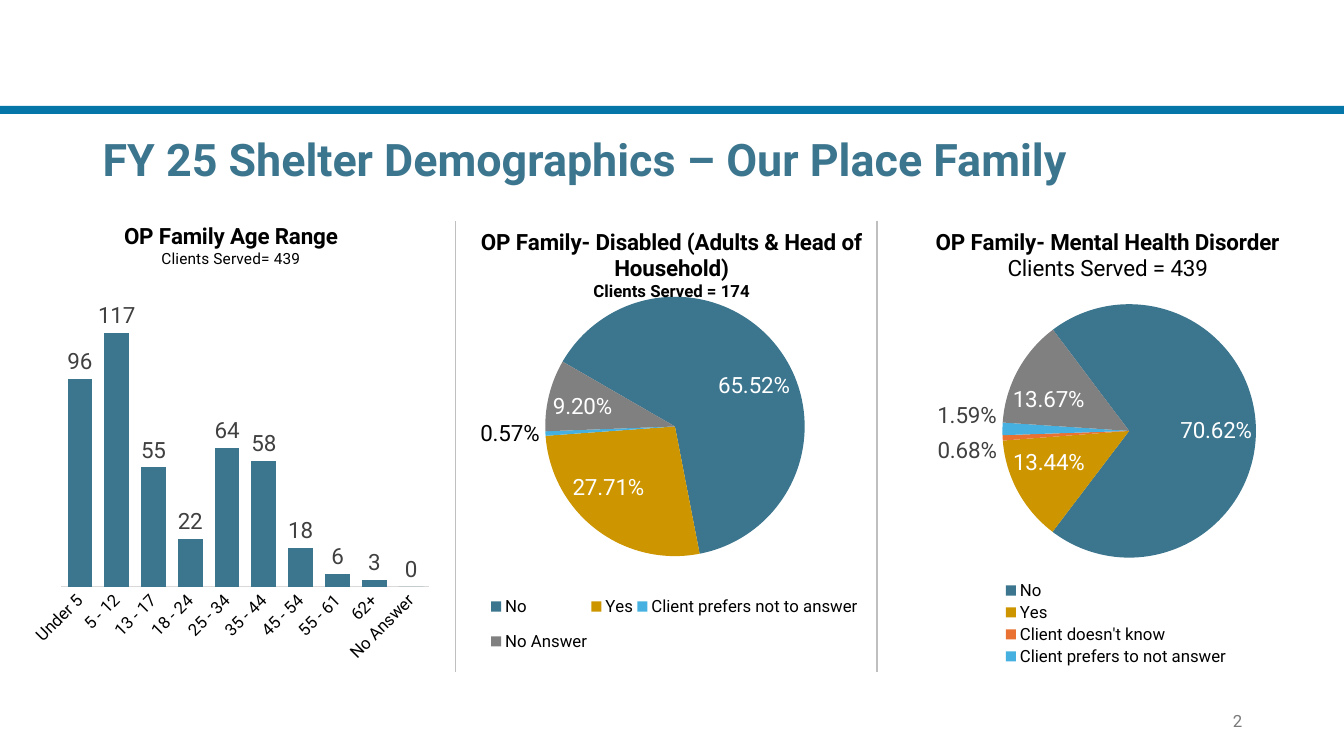
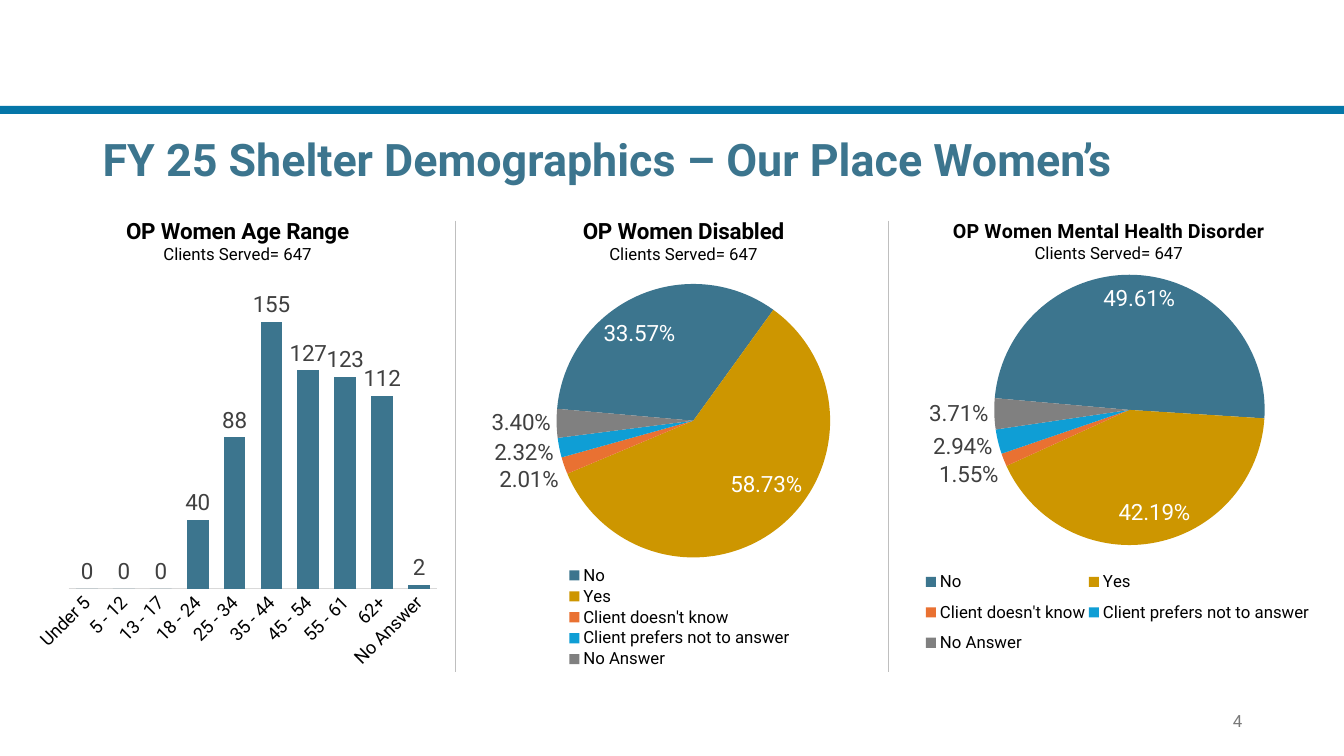
from dataclasses import dataclass

from lxml import etree
from pptx import Presentation
from pptx import util as u
from pptx.chart.data import CategoryChartData
from pptx.dml.color import RGBColor
from pptx.enum import chart as ch, shapes, text
from pptx.oxml.ns import qn


@dataclass(frozen=True)
class Theme:
    font: str = "Roboto"
    band: str = "0476A8"
    teal: str = "3C758E"
    gold: str = "CD9600"
    orange: str = "E97132"
    sky: str = "46B1E1"
    blue: str = "0F9ED5"
    gray: str = "808080"
    ink: str = "000000"
    label: str = "404040"
    white: str = "FFFFFF"
    rule: str = "BFBFBF"
    axis: str = "D9D9D9"
    number: str = "797979"
    title_size: int = 32
    label_size: int = 16
    small_size: int = 12


T = Theme()
AGES = ["Under 5", "5 - 12", "13 - 17", "18 - 24", "25 - 34",
        "35 - 44", "45 - 54", "55 - 61", "62+", "No Answer"]
ANSWERS = ["No", "Yes", "Client doesn't know",
           "Client prefers not to answer", "No Answer"]
WOMEN_COLORS = [T.teal, T.gold, T.orange, T.blue, T.gray]


def style_font(font, size, color, bold=False):
    font.name = T.font
    font.size = u.Pt(size)
    font.bold = bold
    font.color.rgb = RGBColor.from_string(color)


def add_run(p, words, size, color, bold=False):
    r = p.add_run()
    r.text = words
    style_font(r.font, size, color, bold)


def add_text(slide, box, words, size, color, bold=False,
             align=text.PP_ALIGN.LEFT, spacing=1.0):
    sp = slide.shapes.add_textbox(*map(u.Inches, box))
    tf = sp.text_frame
    tf.word_wrap = True
    tf.vertical_anchor = text.MSO_ANCHOR.MIDDLE
    p = tf.paragraphs[0]
    p.alignment = align
    p.line_spacing = spacing
    add_run(p, words, size, color, bold)


def add_band(slide):
    sp = slide.shapes.add_shape(
        shapes.MSO_SHAPE.RECTANGLE, 0, u.Inches(1.05), u.Inches(13.33), u.Inches(0.08))
    sp.shadow.inherit = False
    sp.fill.solid()
    sp.fill.fore_color.rgb = RGBColor.from_string(T.band)
    sp.line.fill.background()


def add_divider(slide, x):
    line = slide.shapes.add_connector(
        shapes.MSO_CONNECTOR.STRAIGHT,
        u.Inches(x), u.Inches(2.19), u.Inches(x), u.Inches(6.67))
    line.line.color.rgb = RGBColor.from_string(T.rule)
    line.line.width = u.Pt(1)
    etree.SubElement(line._element.spPr, qn("a:effectLst"))


def set_layout(parent, index, values, inner=False, edge=True):
    for old in parent.findall(qn("c:layout")):
        parent.remove(old)
    layout = etree.Element(qn("c:layout"))
    manual = etree.SubElement(layout, qn("c:manualLayout"))
    if inner:
        etree.SubElement(manual, qn("c:layoutTarget")).set("val", "inner")
    if edge:
        for mode in ("xMode", "yMode"):
            etree.SubElement(manual, qn("c:" + mode)).set("val", "edge")
    for name, value in zip("xywh", values):
        etree.SubElement(manual, qn("c:" + name)).set("val", f"{value:.4f}")
    parent.insert(index, layout)


def fractions(frame, box):
    left, top, width, height = frame
    x, y, *size = box
    return [(x - left) / width, (y - top) / height,
            *(s / full for s, full in zip(size, (width, height)))]


def add_chart(slide, kind, frame, cats, vals, fmt, heading, heading_at, plot):
    data = CategoryChartData(number_format=fmt)
    data.categories = cats
    data.add_series("Series 1", vals)
    chart = slide.shapes.add_chart(kind, *map(u.Inches, frame), data).chart
    style_font(chart.font, 10, T.ink)
    chart.has_legend = False
    chart.has_title = True
    tf = chart.chart_title.text_frame
    for i, (words, size, bold) in enumerate(heading):
        p = tf.add_paragraph() if i else tf.paragraphs[0]
        add_run(p, words, size, T.ink, bold)
    chart.chart_title.include_in_layout = False
    set_layout(chart.chart_title._element, 1, fractions(frame, heading_at))
    set_layout(chart._chartSpace.chart.plotArea, 0, plot, inner=True)
    labels = chart.series[0].data_labels
    labels.show_value = True
    labels.number_format = fmt
    labels.number_format_is_linked = False
    labels.position = ch.XL_LABEL_POSITION.OUTSIDE_END
    style_font(labels.font, T.label_size, T.label)
    return chart


def add_age_chart(slide, frame, vals, heading, heading_at, plot_box, top, gap, size):
    chart = add_chart(slide, ch.XL_CHART_TYPE.COLUMN_CLUSTERED, frame, AGES, vals,
                      "#,##0", heading, heading_at, fractions(frame, plot_box))
    bars = chart.plots[0]
    bars.gap_width = gap
    bars.overlap = -27
    bars.vary_by_categories = False
    fill = chart.series[0].format.fill
    fill.solid()
    fill.fore_color.rgb = RGBColor.from_string(T.teal)
    values = chart.value_axis
    values.minimum_scale = 0
    values.maximum_scale = top
    values.has_major_gridlines = False
    values.visible = False
    ages = chart.category_axis
    ages.major_tick_mark = ch.XL_TICK_MARK.NONE
    ages.format.line.color.rgb = RGBColor.from_string(T.axis)
    ages.format.line.width = u.Pt(0.75)
    style_font(ages.tick_labels.font, size, T.ink)
    ages._element.find(qn("c:txPr")).find(qn("a:bodyPr")).set("rot", "-2700000")


def set_flag(parent, name, value):
    for old in parent.findall(qn(name)):
        parent.remove(old)
    etree.SubElement(parent, qn(name)).set("val", str(value))


def place_pie_labels(series, frame, inside, nudges, outside_color):
    style_font(series.data_labels.font, T.label_size, outside_color)
    set_flag(series.data_labels._element, "c:showLeaderLines", 0)
    for i in sorted({*inside, *nudges}):
        label = series.points[i].data_label
        within = i in inside
        style_font(label.font, T.label_size, T.white if within else outside_color)
        label.position = (ch.XL_LABEL_POSITION.INSIDE_END if within
                          else ch.XL_LABEL_POSITION.OUTSIDE_END)
        if i in nudges:
            dx, dy = nudges[i]
            set_layout(label._get_or_add_dLbl(), 1,
                       (dx / frame[2], dy / frame[3]), edge=False)


def add_answer_pie(slide, frame, cats, vals, colors, heading, heading_at, plot, start,
                   inside, nudges, legend_box, outside_color=T.label, hidden=None):
    chart = add_chart(slide, ch.XL_CHART_TYPE.PIE, frame, cats, vals,
                      "0.00%", heading, heading_at, plot)
    series = chart.series[0]
    for i, color in enumerate(colors):
        fill = series.points[i].format.fill
        fill.solid()
        fill.fore_color.rgb = RGBColor.from_string(color)
    place_pie_labels(series, frame, inside, nudges, outside_color)
    set_flag(chart.plots[0]._element, "c:firstSliceAng", start)
    chart.has_legend = True
    legend = chart.legend
    legend.position = ch.XL_LEGEND_POSITION.BOTTOM
    legend.include_in_layout = False
    style_font(legend.font, T.small_size, T.ink)
    set_layout(legend._element, 1, fractions(frame, legend_box))
    if hidden is not None:
        entry = etree.Element(qn("c:legendEntry"))
        etree.SubElement(entry, qn("c:idx")).set("val", str(hidden))
        etree.SubElement(entry, qn("c:delete")).set("val", "1")
        legend._element.insert(1, entry)


def add_page(prs, title, number, dividers):
    slide = prs.slides.add_slide(prs.slide_layouts[6])
    add_band(slide)
    add_text(slide, (0.92, 1.23, 11.5, 0.75), title, T.title_size, T.teal, True,
             spacing=0.9)
    for x in dividers:
        add_divider(slide, x)
    add_text(slide, (9.42, 6.95, 3, 0.4), number, T.small_size, T.number,
             align=text.PP_ALIGN.RIGHT)
    return slide


def add_family_page(prs):
    slide = add_page(prs, "FY 25 Shelter Demographics – Our Place Family", "2", (4.52, 8.7))
    add_age_chart(
        slide, (0.24, 2.04, 4.11, 4.63), [96, 117, 55, 22, 64, 58, 18, 6, 3, 0],
        [("OP Family Age Range", 16, True), ("Clients Served= 439", 11, False)],
        (1.2, 2.18), (0.61, 2.81, 3.65, 3.01), 140, 49, 12)
    add_answer_pie(
        slide, (4.19, 2.09, 4.95, 4.64),
        ["No", "Yes", "Client prefers not to answer", "No Answer"],
        [0.6552, 0.2771, 0.0057, 0.092], [T.teal, T.gold, T.sky, T.gray],
        [("OP Family- Disabled (Adults & Head of Household)", 16, True),
         ("Clients Served = 174", 12, True)],
        (4.74, 2.24), (0.246, 0.184, 0.52, 0.555), 300, (0, 1, 3),
        {0: (0.14, 0.19), 1: (-0.27, -0.24), 3: (-0.02, -0.02)},
        (4.83, 5.77, 3.72, 0.84), outside_color=T.ink)
    add_answer_pie(
        slide, (8.7, 2.09, 4.55, 4.64),
        ["No", "Yes", "Client doesn't know", "Client prefers to not answer", "No Answer"],
        [0.7062, 0.1344, 0.0068, 0.0159, 0.1367],
        [T.teal, T.gold, T.orange, T.sky, T.gray],
        [("OP Family- Mental Health Disorder", 16, True),
         ("Clients Served = 439", 16, False)],
        (9.25, 2.24), (0.256, 0.2, 0.587, 0.542), 323, (0, 1, 4),
        {0: (0.02, 0), 1: (-0.1, -0.13), 2: (0, 0.13), 3: (0, -0.13), 4: (-0.1, 0.14)},
        (9.87, 5.74, 2.4, 0.89), hidden=4)


def add_women_page(prs):
    slide = add_page(prs, "FY 25 Shelter Demographics – Our Place Women’s", "4", (4.52, 8.81))
    served = ("Clients Served= 647", 12, False)
    add_age_chart(
        slide, (0.28, 1.98, 4.15, 4.76), [0, 0, 0, 40, 88, 155, 127, 123, 112, 2],
        [("OP Women Age Range", 16, True), served],
        (1.22, 2.13), (0.68, 2.77, 3.66, 3.07), 180, 69, 13)
    add_answer_pie(
        slide, (4.46, 1.98, 4.68, 4.76), ANSWERS,
        [0.3357, 0.5873, 0.0201, 0.0232, 0.034], WOMEN_COLORS,
        [("OP Women Disabled", 16, True), served],
        (5.75, 2.13), (0.221, 0.176, 0.591, 0.57), 275, (0, 1),
        {0: (-0.35, 0.2), 1: (0.27, -0.25), 3: (0, -0.08)},
        (5.54, 5.6, 2.4, 1.05))
    add_answer_pie(
        slide, (8.75, 1.98, 4.5, 4.69), ANSWERS,
        [0.4961, 0.4219, 0.0155, 0.0294, 0.0371], WOMEN_COLORS,
        [("OP Women Mental Health Disorder", 14, True), served],
        (9.42, 2.13), (0.247, 0.159, 0.596, 0.572), 275, (0, 1),
        {0: (0, 0.05), 1: (0.37, -0.11), 3: (0, -0.09)},
        (9.15, 5.57, 3.87, 1.01))


def main():
    prs = Presentation()
    prs.slide_width = u.Inches(13.33)
    prs.slide_height = u.Inches(7.5)
    add_family_page(prs)
    add_women_page(prs)
    prs.save("out.pptx")


if __name__ == "__main__":
    main()
